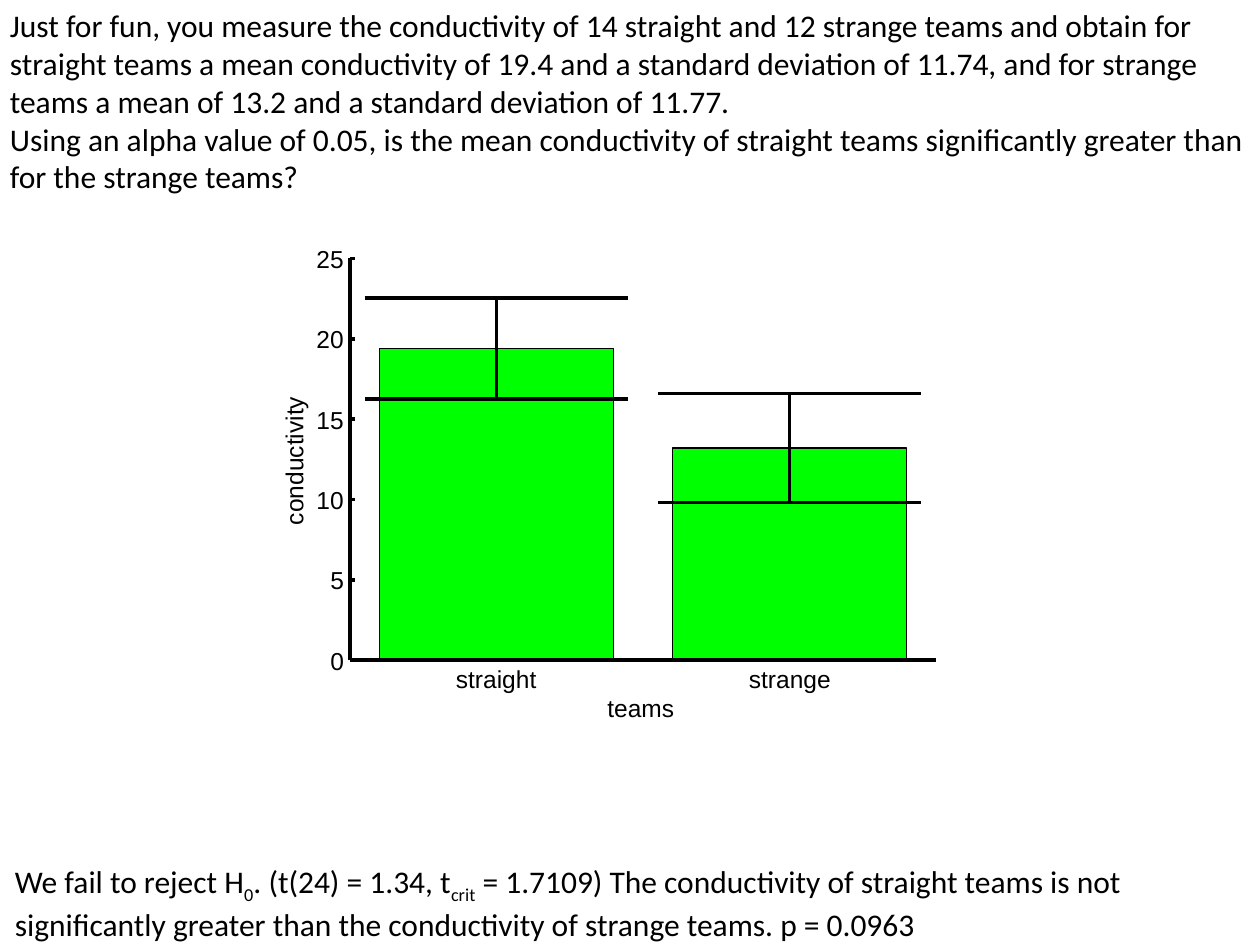
import math

import pptx
import pptx.dml.color
import pptx.enum.shapes
import pptx.enum.text
import pptx.oxml
import pptx.util
from pptx.util import Cm

BLACK = pptx.dml.color.RGBColor(0, 0, 0)
WHITE = pptx.dml.color.RGBColor(255, 255, 255)
GREEN = pptx.dml.color.RGBColor(0, 255, 0)

QUESTION = (
    "Just for fun, you measure the conductivity of 14 straight and 12 strange teams "
    "and obtain for straight teams a mean conductivity of 19.4 and a standard deviation "
    "of 11.74, and for strange teams a mean of 13.2 and a standard deviation of 11.77. \n"
    "Using an alpha value of 0.05, is the mean conductivity of straight teams "
    "significantly greater than for the strange teams?"
)
# Each part of the answer: text, is subscript
ANSWER = [
    ("We fail to reject H", False),
    ("0", True),
    (". (t(24) = 1.34, t", False),
    ("crit", True),
    (" = 1.7109) The conductivity of straight teams is not significantly greater "
     "than the conductivity of strange teams. p = 0.0963", False),
]
# Each team: name, mean, standard deviation, count
TEAMS = [("straight", 19.4, 11.74, 14), ("strange", 13.2, 11.77, 12)]
AXIS_MAXIMUM = 25
TICK_STEP = 5
LABEL_HEIGHT = 0.69


def set_font(paragraph, name, size):
    paragraph.font.name = name
    paragraph.font.size = pptx.util.Pt(size)
    paragraph.font.color.rgb = BLACK


def add_statement(slide, left, top, width, height, parts):
    """Place a wrapped statement made of plain and subscript parts."""
    shape = slide.shapes.add_textbox(Cm(left), Cm(top), Cm(width), Cm(height))
    frame = shape.text_frame
    frame.word_wrap = True
    frame.auto_size = pptx.enum.text.MSO_AUTO_SIZE.SHAPE_TO_FIT_TEXT
    paragraph = frame.paragraphs[0]
    set_font(paragraph, "Calibri", 18)
    for index, line in enumerate(parts[0][0].split("\n")):
        if index:
            paragraph.add_line_break()
        paragraph.add_run().text = line
    for text, is_subscript in parts[1:]:
        run = paragraph.add_run()
        run.text = text
        if is_subscript:
            run.font._element.set("baseline", "-25000")


def add_label(group, left, top, width, text, rotation=0):
    shape = group.shapes.add_textbox(Cm(left), Cm(top), Cm(width), Cm(LABEL_HEIGHT))
    shape.rotation = rotation
    frame = shape.text_frame
    frame.margin_left = frame.margin_right = frame.margin_top = frame.margin_bottom = 0
    frame.word_wrap = False
    frame.auto_size = pptx.enum.text.MSO_AUTO_SIZE.SHAPE_TO_FIT_TEXT
    paragraph = frame.paragraphs[0]
    paragraph.text = text
    set_font(paragraph, "Arial", 14)


def add_line(group, start_x, start_y, end_x, end_y):
    line = group.shapes.add_connector(
        pptx.enum.shapes.MSO_CONNECTOR.STRAIGHT,
        Cm(start_x), Cm(start_y), Cm(end_x), Cm(end_y))
    line.line.color.rgb = BLACK
    line.line.width = pptx.util.Pt(0)
    properties = line._element.spPr
    properties.append(pptx.oxml.parse_xml(
        '<a:effectLst xmlns:a="http://schemas.openxmlformats.org/drawingml/2006/main"/>'))


def add_rectangle(group, left, top, width, height, line_color, fill_color=None):
    shape = group.shapes.add_shape(
        pptx.enum.shapes.MSO_SHAPE.RECTANGLE, Cm(left), Cm(top), Cm(width), Cm(height))
    shape.shadow.inherit = False
    if fill_color is None:
        shape.fill.background()
    else:
        shape.fill.solid()
        shape.fill.fore_color.rgb = fill_color
    shape.line.color.rgb = line_color
    shape.line.width = pptx.util.Pt(0)


def add_bar_plot(slide, left, top, width, height):
    """Draw bars with standard errors; the box is the plot area inside the axes."""
    group = slide.shapes.add_group_shape()
    bottom = top + height
    slot = width / len(TEAMS)
    bar_width = 0.8 * slot
    cap_width = 0.9 * slot

    def value_y(value):
        return bottom - height * value / AXIS_MAXIMUM

    # Plot area and vertical axis
    add_rectangle(group, left, top, width, height, WHITE)
    add_line(group, left, bottom, left, top)
    for value in range(0, AXIS_MAXIMUM + 1, TICK_STEP):
        y = value_y(value)
        label_width = 0.25 + 0.28 * len(str(value))
        add_line(group, left, y, left + 0.1, y)
        add_label(group, left + 0.13 - label_width, y - 0.29, label_width, str(value))

    # Bars, with ticks and names below
    for index, (name, mean, deviation, count) in enumerate(TEAMS):
        center = left + (index + 0.5) * slot
        bar_top = value_y(mean)
        add_line(group, center, bottom, center, bottom - 0.13)
        add_label(group, center - 0.82, bottom + 0.08, 2, name)
        add_rectangle(group, center - bar_width / 2, bar_top,
                      bar_width, bottom - bar_top, BLACK, GREEN)

    # Horizontal axis
    add_line(group, left, bottom, left + width, bottom)

    # Error bars
    for index, (name, mean, deviation, count) in enumerate(TEAMS):
        center = left + (index + 0.5) * slot
        error = deviation / math.sqrt(count)
        low, high = value_y(mean - error), value_y(mean + error)
        add_line(group, center, low, center, high)
        for y in (low, high):
            add_line(group, center - cap_width / 2, y, center + cap_width / 2, y)

    # Axis titles
    add_label(group, left - 2.59, top + 3.53, 3, "conductivity", 270)
    add_label(group, left + width / 2 - 0.72, bottom + 0.66, 1.68, "teams")


def main():
    presentation = pptx.Presentation()
    presentation.slide_width = Cm(25.4)
    presentation.slide_height = Cm(19.05)
    slide = presentation.slides.add_slide(presentation.slide_layouts[6])
    add_statement(slide, -0.05, 0, 25.45, 4.11, [(QUESTION, False)])
    add_statement(slide, 0.05, 17.25, 25.45, 1.8, ANSWER)
    add_bar_plot(slide, 7.06, 5.21, 11.81, 8.1)
    presentation.save("out.pptx")


if __name__ == "__main__":
    main()
